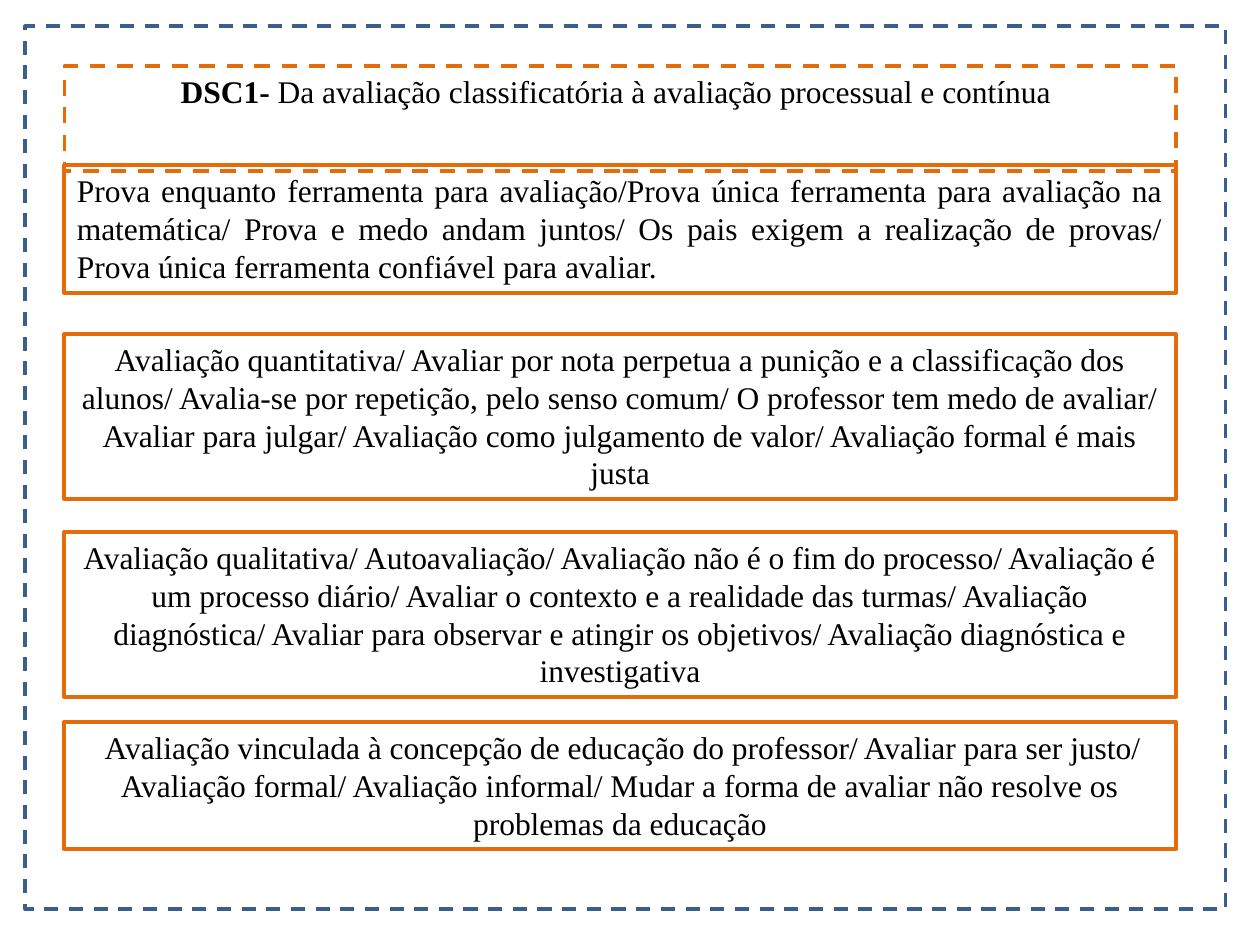
import pptx
import pptx.dml.color
import pptx.enum.dml
import pptx.enum.shapes
import pptx.enum.text
import pptx.util

Cm = pptx.util.Cm
Pt = pptx.util.Pt
RGBColor = pptx.dml.color.RGBColor
ALIGN = pptx.enum.text.PP_ALIGN
DASH = pptx.enum.dml.MSO_LINE.DASH

BLUE = RGBColor(0x3A, 0x5F, 0x8C)
ORANGE = RGBColor(0xE4, 0x6C, 0x0A)
BLACK = RGBColor(0, 0, 0)

LEFT, WIDTH = 1.3, 22.4
THREE_LINES, FOUR_LINES = 2.57, 3.33

BOXES = [
    (3.33, THREE_LINES, ALIGN.JUSTIFY,
     "Prova enquanto ferramenta para avaliação/Prova única ferramenta para "
     "avaliação na matemática/ Prova e medo andam juntos/ Os pais exigem a "
     "realização de provas/ Prova única ferramenta confiável para avaliar."),
    (6.73, FOUR_LINES, ALIGN.CENTER,
     "Avaliação quantitativa/ Avaliar por nota perpetua a punição e a "
     "classificação dos alunos/ Avalia-se por repetição, pelo senso comum/ "
     "O professor tem medo de avaliar/ Avaliar para julgar/ Avaliação como "
     "julgamento de valor/ Avaliação formal é mais justa"),
    (10.72, FOUR_LINES, ALIGN.CENTER,
     "Avaliação qualitativa/ Autoavaliação/ Avaliação não é o fim do processo/ "
     "Avaliação é um processo diário/ Avaliar o contexto e a realidade das "
     "turmas/ Avaliação diagnóstica/ Avaliar para observar e atingir os "
     "objetivos/ Avaliação diagnóstica e investigativa"),
    (14.55, THREE_LINES, ALIGN.CENTER,
     " Avaliação vinculada à concepção de educação do professor/ Avaliar para "
     "ser justo/ Avaliação formal/ Avaliação informal/ Mudar a forma de avaliar "
     "não resolve os problemas da educação"),
]


class SlideBuilder:
    font = {"name": "Times New Roman", "size": Pt(18)}
    frame_format = {
        "word_wrap": True,
        "auto_size": pptx.enum.text.MSO_AUTO_SIZE.SHAPE_TO_FIT_TEXT,
        "vertical_anchor": pptx.enum.text.MSO_ANCHOR.TOP,
    }

    def __init__(self, slide):
        self.slide = slide

    def apply(self, target, values):
        for name, value in values.items():
            setattr(target, name, value)

    def outline(self, sp, color, width, dash=None):
        sp.fill.background()
        sp.line.color.rgb = color
        self.apply(sp.line, {"width": Pt(width), "dash_style": dash})

    def rectangle(self, left, top, width, height, color, line_width, dash=None):
        sp = self.slide.shapes.add_shape(
            pptx.enum.shapes.MSO_SHAPE.RECTANGLE,
            Cm(left), Cm(top), Cm(width), Cm(height))
        sp.shadow.inherit = False
        self.outline(sp, color, line_width, dash)
        return sp

    def add_text(self, sp, align, runs):
        """Fill the shape with one paragraph of (text, bold) runs."""
        tf = sp.text_frame
        self.apply(tf, self.frame_format)
        p = tf.paragraphs[0]
        p.alignment = align
        for text, bold in runs:
            r = p.add_run()
            r.text = text
            self.apply(r.font, {**self.font, "bold": bold})
            r.font.color.rgb = BLACK

    def title(self, top, height, runs):
        sp = self.slide.shapes.title
        self.apply(sp, {"left": Cm(LEFT), "top": Cm(top),
                        "width": Cm(WIDTH), "height": Cm(height)})
        self.outline(sp, ORANGE, 2.25, DASH)
        self.add_text(sp, ALIGN.CENTER, runs)

    def text_box(self, top, height, align, text):
        sp = self.rectangle(LEFT, top, WIDTH, height, ORANGE, 2.25)
        self.add_text(sp, align, [(text, False)])


def main():
    prs = pptx.Presentation()
    prs.slide_width, prs.slide_height = Cm(25.4), Cm(19.05)
    s = SlideBuilder(prs.slides.add_slide(prs.slide_layouts[5]))
    s.rectangle(0.51, 0.53, 24.2, 17.8, BLUE, 2, DASH)
    for box in BOXES:
        s.text_box(*box)
    s.title(1.33, 1.03, [
        ("DSC1- ", True),
        ("Da avaliação classificatória à avaliação processual e contínua ", False),
    ])
    prs.save("out.pptx")


if __name__ == "__main__":
    main()
